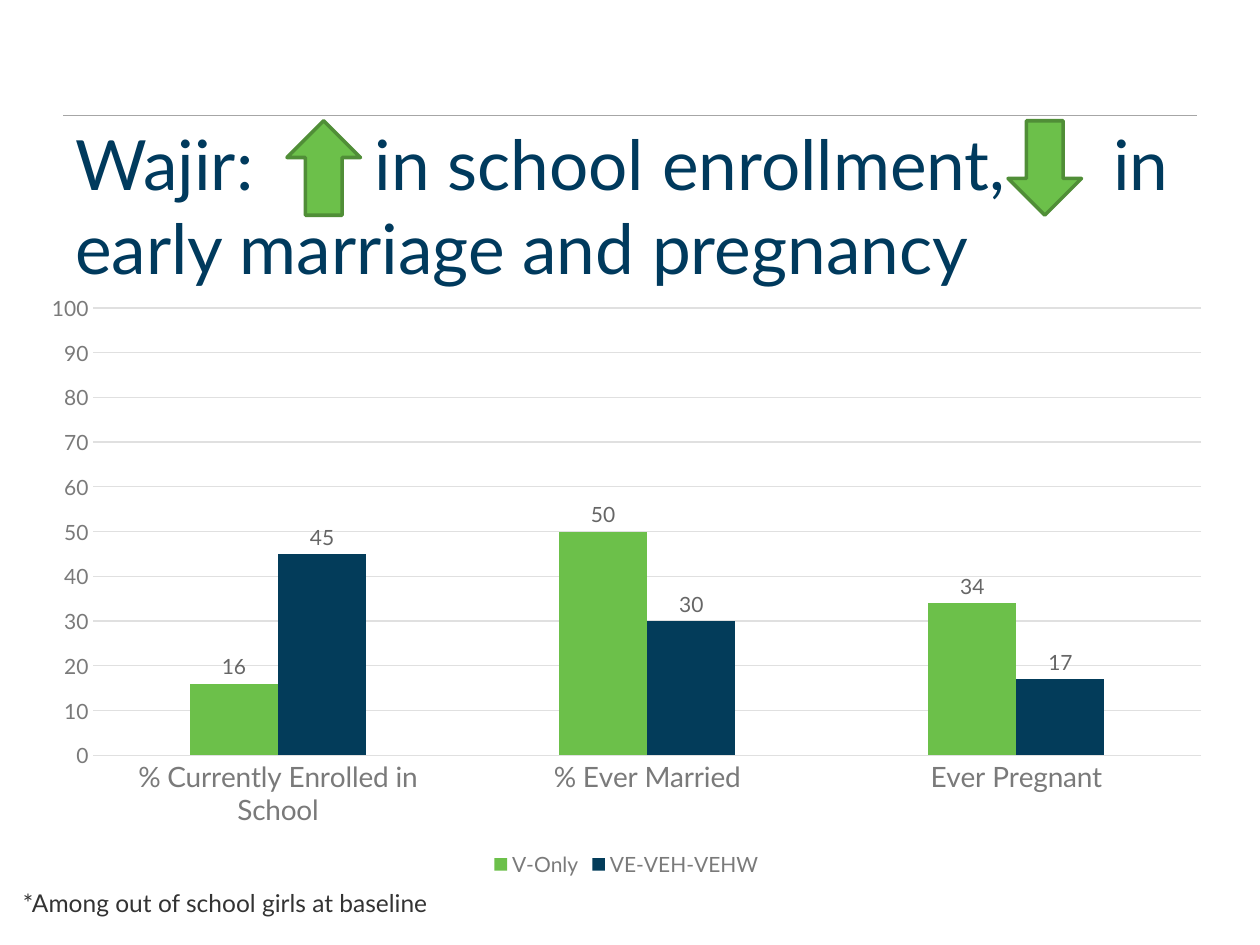
from dataclasses import dataclass

from lxml.etree import SubElement
from pptx import Presentation
from pptx.chart.data import CategoryChartData
from pptx.dml.color import RGBColor
from pptx.enum.chart import XL_CHART_TYPE, XL_LABEL_POSITION, XL_LEGEND_POSITION, XL_TICK_MARK
from pptx.enum.shapes import MSO_CONNECTOR, MSO_SHAPE
from pptx.enum.text import MSO_ANCHOR
from pptx.oxml.ns import qn
from pptx.slide import Slide
from pptx.text.text import Font
from pptx.util import Pt

FONT_NAME = "Lato"
NAVY = RGBColor(0x00, 0x3A, 0x5D)
BAR_NAVY = RGBColor(0x03, 0x3C, 0x5A)
GREEN = RGBColor(0x6C, 0xC0, 0x4A)
DARK_GREEN = RGBColor(0x50, 0x8E, 0x37)
TEXT_GRAY = RGBColor(0x33, 0x33, 0x33)
LABEL_GRAY = RGBColor(0x66, 0x66, 0x66)
AXIS_GRAY = RGBColor(0x7A, 0x7A, 0x7A)
GRID_GRAY = RGBColor(0xE0, 0xE0, 0xE0)
RULE_GRAY = RGBColor(0xA6, 0xA6, 0xA6)


@dataclass(frozen=True)
class TextBlock:
    text: str
    left: float
    top: float
    width: float
    height: float
    size: float
    color: RGBColor
    anchor: MSO_ANCHOR = MSO_ANCHOR.TOP
    tab_stops: tuple[float, ...] = ()


@dataclass(frozen=True)
class TrendArrow:
    left: float
    rotation: float


@dataclass(frozen=True)
class BarSeries:
    name: str
    values: tuple[int, ...]
    color: RGBColor


TEXT_BLOCKS = (
    TextBlock("Wajir:\tin school enrollment,\tin early marriage and pregnancy",
              36, 72, 648, 90, 39.6, NAVY, MSO_ANCHOR.MIDDLE, (171, 593)),
    TextBlock("*Among out of school girls at baseline", 6, 504, 384, 24.5, 14, TEXT_GRAY),
)
ARROWS = (TrendArrow(164, 0), TrendArrow(576, 180))
CATEGORIES = ("% Currently Enrolled in School", "% Ever Married", "Ever Pregnant")
SERIES = (
    BarSeries("V-Only", (16, 50, 34), GREEN),
    BarSeries("VE-VEH-VEHW", (45, 30, 17), BAR_NAVY),
)


def style_font(font: Font, size: float, color: RGBColor) -> None:
    font.name = FONT_NAME
    font.size = Pt(size)
    font.color.rgb = color


def add_rule(slide: Slide) -> None:
    rule = slide.shapes.add_connector(MSO_CONNECTOR.STRAIGHT, Pt(36), Pt(66), Pt(684), Pt(66))
    rule.line.color.rgb = RULE_GRAY
    rule.line.width = Pt(1)
    SubElement(rule.element.spPr, qn("a:effectLst"))


def add_text(slide: Slide, block: TextBlock) -> None:
    shape = slide.shapes.add_textbox(
        Pt(block.left), Pt(block.top), Pt(block.width), Pt(block.height))
    text_frame = shape.text_frame
    text_frame.word_wrap = True
    text_frame.vertical_anchor = block.anchor
    text_frame.text = block.text
    paragraph = text_frame.paragraphs[0]
    if block.tab_stops:
        properties = paragraph._p.get_or_add_pPr()
        tab_list = SubElement(properties, qn("a:tabLst"))
        for position in block.tab_stops:
            SubElement(tab_list, qn("a:tab"), pos=str(Pt(position)), algn="l")
    for run in paragraph.runs:
        style_font(run.font, block.size, block.color)


def add_chart(slide: Slide) -> None:
    data = CategoryChartData()
    data.categories = CATEGORIES
    for series in SERIES:
        data.add_series(series.name, series.values)
    chart = slide.shapes.add_chart(
        XL_CHART_TYPE.COLUMN_CLUSTERED, Pt(16), Pt(162), Pt(684), Pt(342), data).chart
    style_font(chart.font, 10, TEXT_GRAY)
    chart.has_title = False
    chart.has_legend = True
    chart.legend.position = XL_LEGEND_POSITION.BOTTOM
    chart.legend.include_in_layout = False
    style_font(chart.legend.font, 12, AXIS_GRAY)

    for axis, size in ((chart.category_axis, 16), (chart.value_axis, 12)):
        axis.major_tick_mark = XL_TICK_MARK.NONE
        axis.minor_tick_mark = XL_TICK_MARK.NONE
        style_font(axis.tick_labels.font, size, AXIS_GRAY)
    value_axis = chart.value_axis
    value_axis.minimum_scale = 0
    value_axis.maximum_scale = 100
    value_axis.major_unit = 10
    value_axis.format.line.fill.background()
    for line in (chart.category_axis.format.line, value_axis.major_gridlines.format.line):
        line.color.rgb = GRID_GRAY
        line.width = Pt(0.75)

    plot = chart.plots[0]
    plot.gap_width = 219
    plot.overlap = 0
    plot.vary_by_categories = False
    for bars, series in zip(plot.series, SERIES):
        bars.format.fill.solid()
        bars.format.fill.fore_color.rgb = series.color
        labels = bars.data_labels
        labels.show_value = True
        labels.position = XL_LABEL_POSITION.OUTSIDE_END
        style_font(labels.font, 12, LABEL_GRAY)


def add_arrow(slide: Slide, arrow: TrendArrow) -> None:
    shape = slide.shapes.add_shape(
        MSO_SHAPE.UP_ARROW, Pt(arrow.left), Pt(69), Pt(42), Pt(54))
    shape.rotation = arrow.rotation
    shape.shadow.inherit = False
    shape.fill.solid()
    shape.fill.fore_color.rgb = GREEN
    shape.line.color.rgb = DARK_GREEN
    shape.line.width = Pt(2)


def main() -> None:
    presentation = Presentation()
    presentation.slide_width = Pt(720)
    presentation.slide_height = Pt(540)
    slide = presentation.slides.add_slide(presentation.slide_layouts[6])
    add_rule(slide)
    add_chart(slide)
    for block in TEXT_BLOCKS:
        add_text(slide, block)
    for arrow in ARROWS:
        add_arrow(slide, arrow)
    presentation.save("out.pptx")


if __name__ == "__main__":
    main()
